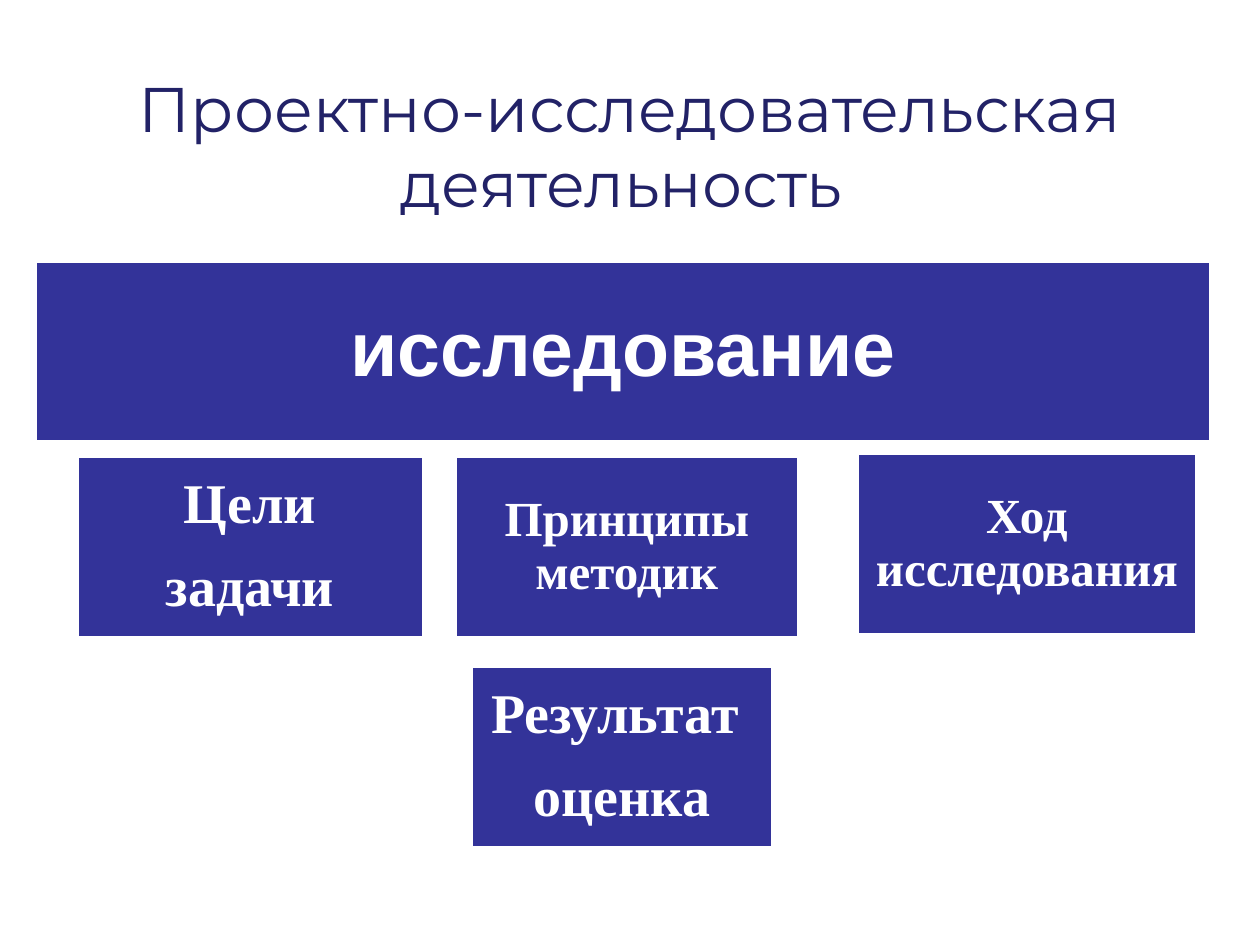
from pptx import Presentation
from pptx.dml.color import RGBColor as RGB
from pptx.enum.shapes import MSO_SHAPE as Shape
from pptx.enum.text import MSO_ANCHOR as Anchor, PP_ALIGN as Align
from pptx.util import Inches, Pt

COLORS = {"title": "222267", "box": "333399", "white": "FFFFFF"}
SERIF = "Times New Roman"
BOX_H = 1.44

# left, top, width, inset, size, font, lines
BOXES = [
    (0.28, 2.07, 9.33, 0.18, 44, "Arial", ["исследование"]),
    (0.61, 3.62, 2.75, 0.13, 32, SERIF, ["Цели", "задачи"]),
    (3.61, 3.62, 2.73, 0.12, 28, SERIF, ["Принципы методик"]),
    (6.8, 3.6, 2.7, 0.12, 28, SERIF, ["Ход исследования"]),
    (3.74, 5.29, 2.39, 0.13, 32, SERIF, ["Результат ", "оценка"]),
]


def color(name):
    return RGB.from_string(COLORS[name])


def set_text(frame, lines, size, font, ink, bold=False):
    frame.word_wrap = True
    frame.vertical_anchor = Anchor.MIDDLE
    frame.text = "\n".join(lines)
    for para in frame.paragraphs:
        para.alignment = Align.CENTER
        for run in para.runs:
            run.font.size = Pt(size)
            run.font.name = font
            run.font.bold = bold
            run.font.color.rgb = color(ink)


def add_title(slide, text):
    box = slide.shapes.add_textbox(
        Inches(0.5), Inches(0.55), Inches(9), Inches(1.2))
    set_text(box.text_frame, [text], 36, "Montserrat", "title")


def add_box(slide, left, top, width, inset, size, font, lines):
    box = slide.shapes.add_shape(
        Shape.RECTANGLE, Inches(left), Inches(top), Inches(width), Inches(BOX_H))
    box.shadow.inherit = False
    box.fill.solid()
    box.fill.fore_color.rgb = color("box")
    box.line.color.rgb = color("white")
    box.line.width = Pt(2)

    frame = box.text_frame
    frame.margin_left = frame.margin_right = Inches(inset)
    frame.margin_top = frame.margin_bottom = Inches(inset)
    set_text(frame, lines, size, font, "white", bold=True)
    for para in frame.paragraphs:
        para.line_spacing = 0.9
        para.space_after = Pt(size * 0.4)


def main():
    prs = Presentation()
    prs.slide_width, prs.slide_height = Inches(10), Inches(7.5)
    slide = prs.slides.add_slide(prs.slide_layouts[6])

    # Heading
    add_title(slide, "Проектно-исследовательская деятельность ")

    # Research block and its parts
    for box in BOXES:
        add_box(slide, *box)

    prs.save("out.pptx")


if __name__ == "__main__":
    main()
